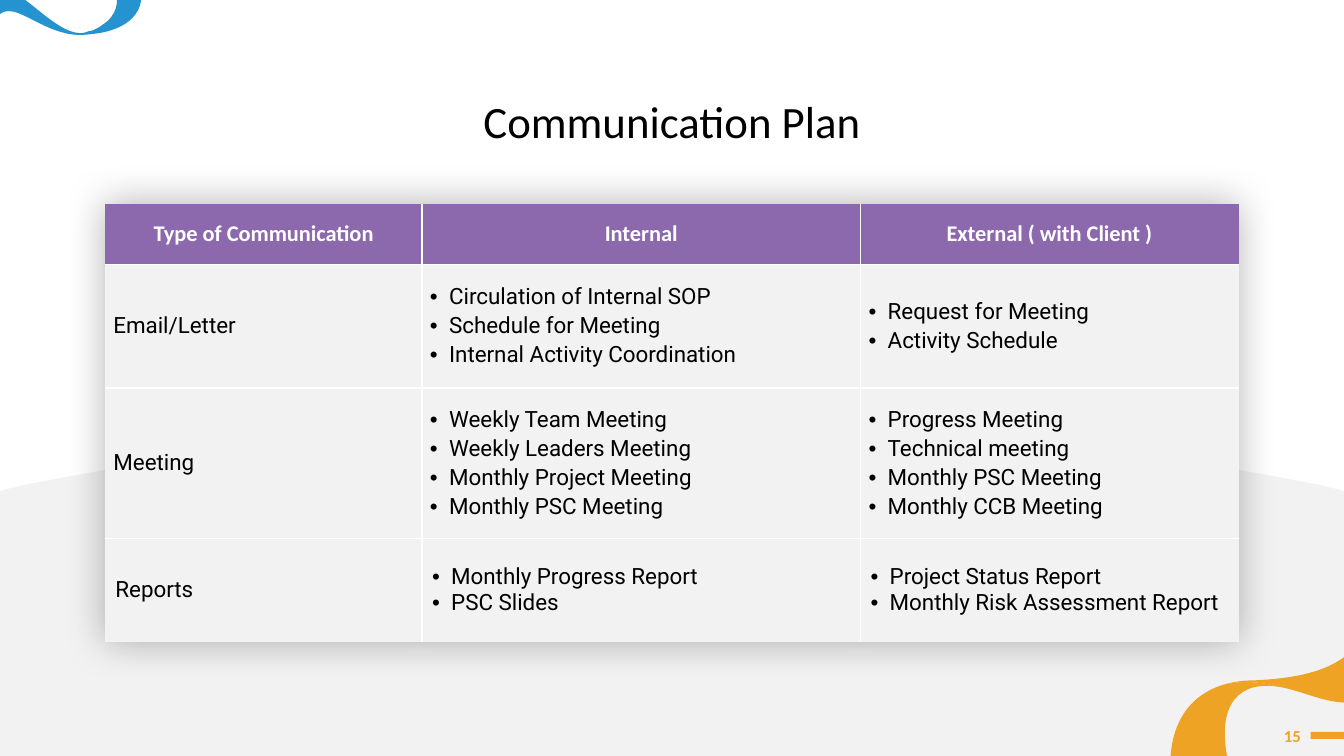
"""Build the Communication Plan slide."""
from lxml import etree
from pptx import Presentation, util as u
from pptx.dml.color import RGBColor
from pptx.enum import shapes, text
from pptx.oxml import ns

WIDTH, HEIGHT = 13.33, 7.5
WHITE, BLACK, GREY = "FFFFFF", "000000", "F2F2F2"
PURPLE, ORANGE, BLUE = "8C69AD", "EFA325", "2593CF"

TITLE = "Communication Plan"
PAGE = "15"
HEADINGS = ["Type of Communication", "Internal", "External ( with Client )"]
PLAN = [
    ("Email/Letter",
     ["Circulation of Internal SOP", "Schedule for Meeting", "Internal Activity Coordination"],
     ["Request for Meeting", "Activity Schedule"]),
    ("Meeting",
     ["Weekly Team Meeting", "Weekly Leaders Meeting", "Monthly Project Meeting",
      "Monthly PSC Meeting"],
     ["Progress Meeting", "Technical meeting", "Monthly PSC Meeting", "Monthly CCB Meeting"]),
    ("Reports",
     ["Monthly Progress Report", "PSC Slides"],
     ["Project Status Report", "Monthly Risk Assessment Report"]),
]
COLUMNS = [3.14, 4.35, 3.75]
ROWS = [0.6, 1.23, 1.49, 1.03]
TABLE_TOP = 2.02

HILL = [(0, HEIGHT), (WIDTH, HEIGHT), (WIDTH, 4.87), (13.08, 4.81),
        (11.12, 4.42, 8.95, 4.2, 6.67, 4.2), (4.39, 4.2, 2.22, 4.42, 0.25, 4.81), (0, 4.87)]
RIBBONS = [
    (ORANGE, [(12.43, 6.82), (12.51, 6.8, 12.58, 6.8, 12.66, 6.81),
              (12.66, 6.81, 12.4, 6.72, 12.11, 6.8), (11.67, 6.95, 11.62, 7.36, 11.61, 7.5),
              (12.17, 7.5), (12.13, 7.28, 12.11, 6.91, 12.43, 6.82)]),
    (ORANGE, [(12.43, 6.75), (12.31, 6.75, 12.2, 6.77, 12.11, 6.8),
              (12.4, 6.72, 12.66, 6.81, 12.66, 6.81), (12.88, 6.84, 13.1, 6.96, 13.33, 6.97),
              (13.33, 6.52), (13.15, 6.65, 12.89, 6.73, 12.43, 6.75)]),
    (BLUE, [(1.4, -0.01), (1.16, -0.01), (1.16, -0.01, 1.18, 0.15, 1.01, 0.25),
            (1.01, 0.25, 0.97, 0.29, 0.89, 0.31), (0.88, 0.31),
            (0.85, 0.32, 0.83, 0.33, 0.8, 0.33), (0.76, 0.33, 0.71, 0.33, 0.65, 0.33),
            (0.73, 0.35, 0.81, 0.35, 0.9, 0.34), (1.41, 0.29, 1.4, -0.01, 1.4, -0.01)]),
    (BLUE, [(0.8, 0.33), (0.51, 0.32, 0.19, -0.17, 0, -0.08), (0, 0.14),
            (0.14, 0.03, 0.35, 0.26, 0.65, 0.33), (0.71, 0.33, 0.76, 0.33, 0.8, 0.33)]),
]


def rgb(value):
    return RGBColor.from_string(value)


def child(parent, tag, **attributes):
    return etree.SubElement(parent, ns.qn(tag), attributes)


def paint(shape, colour):
    shape.fill.solid()
    shape.fill.fore_color.rgb = rgb(colour)
    shape.line.fill.background()
    shape.shadow.inherit = False


def add_outline(slide, outline, colour):
    segments = [[(u.Inches(x), u.Inches(y)) for x, y in zip(part[::2], part[1::2])]
                for part in outline]
    points = sum(segments, [])
    builder = slide.shapes.build_freeform(*points[0], scale=1)
    builder.add_line_segments(points[1:], close=True)
    shape = builder.convert_to_shape()
    route = shape._element.spPr.find(".//" + ns.qn("a:path"))
    for step in list(route):
        route.remove(step)
    for i, segment in enumerate(segments):
        tag = "a:moveTo" if i == 0 else "a:lnTo" if len(segment) == 1 else "a:cubicBezTo"
        step = child(route, tag)
        for x, y in segment:
            child(step, "a:pt", x=str(x - shape.left), y=str(y - shape.top))
    child(route, "a:close")
    paint(shape, colour)


def write(paragraph, words, size, colour, font="Calibri", bold=False, align=text.PP_ALIGN.LEFT):
    paragraph.alignment = align
    run = paragraph.add_run()
    run.text = words
    run.font.name, run.font.size, run.font.bold = font, u.Pt(size), bold
    run.font.color.rgb = rgb(colour)


def add_bullet(paragraph):
    properties = paragraph._p.get_or_add_pPr()
    indent = u.Inches(0.19)
    properties.set("marL", str(indent))
    properties.set("indent", str(-indent))
    child(properties, "a:buFont", typeface="Arial")
    child(properties, "a:buChar", char="•")


def add_borders(cell, sides):
    for side, shown in sides.items():
        line = child(cell._tc.get_or_add_tcPr(), f"a:ln{side}", w=str(u.Pt(1)))
        if shown:
            child(child(line, "a:solidFill"), "a:srgbClr", val=WHITE)
        else:
            child(line, "a:noFill")


def add_plan(slide):
    frame = slide.shapes.add_table(len(ROWS), len(COLUMNS),
                                   u.Inches((WIDTH - sum(COLUMNS)) / 2), u.Inches(TABLE_TOP),
                                   u.Inches(sum(COLUMNS)), u.Inches(sum(ROWS)))
    table = frame.table
    table.horz_banding = False
    effects = etree.Element(ns.qn("a:effectLst"))
    shadow = child(effects, "a:outerShdw", blurRad=str(u.Inches(0.4)), algn="ctr",
                   rotWithShape="0")
    child(child(shadow, "a:srgbClr", val=BLACK), "a:alpha", val="30000")
    table._tbl.tblPr.insert(0, effects)
    for column, width in zip(table.columns, COLUMNS):
        column.width = u.Inches(width)
    for row, height in zip(table.rows, ROWS):
        row.height = u.Inches(height)

    last_row, last_column = len(ROWS) - 1, len(COLUMNS) - 1
    for r, entries in enumerate([HEADINGS, *PLAN]):
        for c, entry in enumerate(entries):
            cell = table.cell(r, c)
            add_borders(cell, {"L": c > 0, "R": c < last_column, "T": r > 0, "B": r < last_row})
            cell.fill.solid()
            cell.fill.fore_color.rgb = rgb(GREY if r else PURPLE)
            cell.vertical_anchor = text.MSO_ANCHOR.MIDDLE
            across, down = (0.1, 0.05) if r == last_row else (0.08, 0)
            cell.margin_left = cell.margin_right = u.Inches(across)
            cell.margin_top = cell.margin_bottom = u.Inches(down)
            bulleted = isinstance(entry, list)
            for i, words in enumerate(entry if bulleted else [entry]):
                paragraph = cell.text_frame.add_paragraph() if i else cell.text_frame.paragraphs[0]
                if bulleted:
                    add_bullet(paragraph)
                if i and r < last_row:
                    paragraph.space_before = u.Pt(2)
                if r:
                    write(paragraph, words, 16, BLACK, "Roboto")
                else:
                    write(paragraph, words, 16, WHITE, bold=True, align=text.PP_ALIGN.CENTER)


def add_title(slide):
    title = slide.shapes.title
    title.left, title.top = u.Inches(4.42), u.Inches(0.88)
    title.width, title.height = u.Inches(4.49), u.Inches(0.64)
    title.text_frame.word_wrap = False
    title.text_frame.vertical_anchor = text.MSO_ANCHOR.TOP
    write(title.text_frame.paragraphs[0], TITLE, 32, BLACK, align=text.PP_ALIGN.CENTER)


def add_page_number(slide):
    number = slide.shapes.add_textbox(u.Inches(12.27), u.Inches(7.1), u.Inches(0.73), u.Inches(0.4))
    number.text_frame.word_wrap = True
    number.text_frame.vertical_anchor = text.MSO_ANCHOR.MIDDLE
    write(number.text_frame.paragraphs[0], PAGE, 12, ORANGE, bold=True, align=text.PP_ALIGN.RIGHT)
    dash = slide.shapes.add_shape(shapes.MSO_SHAPE.RECTANGLE, u.Inches(13), u.Inches(7.26),
                                  u.Inches(WIDTH - 13), u.Inches(0.07))
    paint(dash, ORANGE)


def main():
    deck = Presentation()
    deck.slide_width, deck.slide_height = u.Inches(WIDTH), u.Inches(HEIGHT)
    slide = deck.slides.add_slide(deck.slide_layouts[5])
    add_outline(slide, HILL, GREY)
    add_title(slide)
    add_page_number(slide)
    for colour, outline in RIBBONS:
        add_outline(slide, outline, colour)
    add_plan(slide)
    deck.save("out.pptx")


if __name__ == "__main__":
    main()
